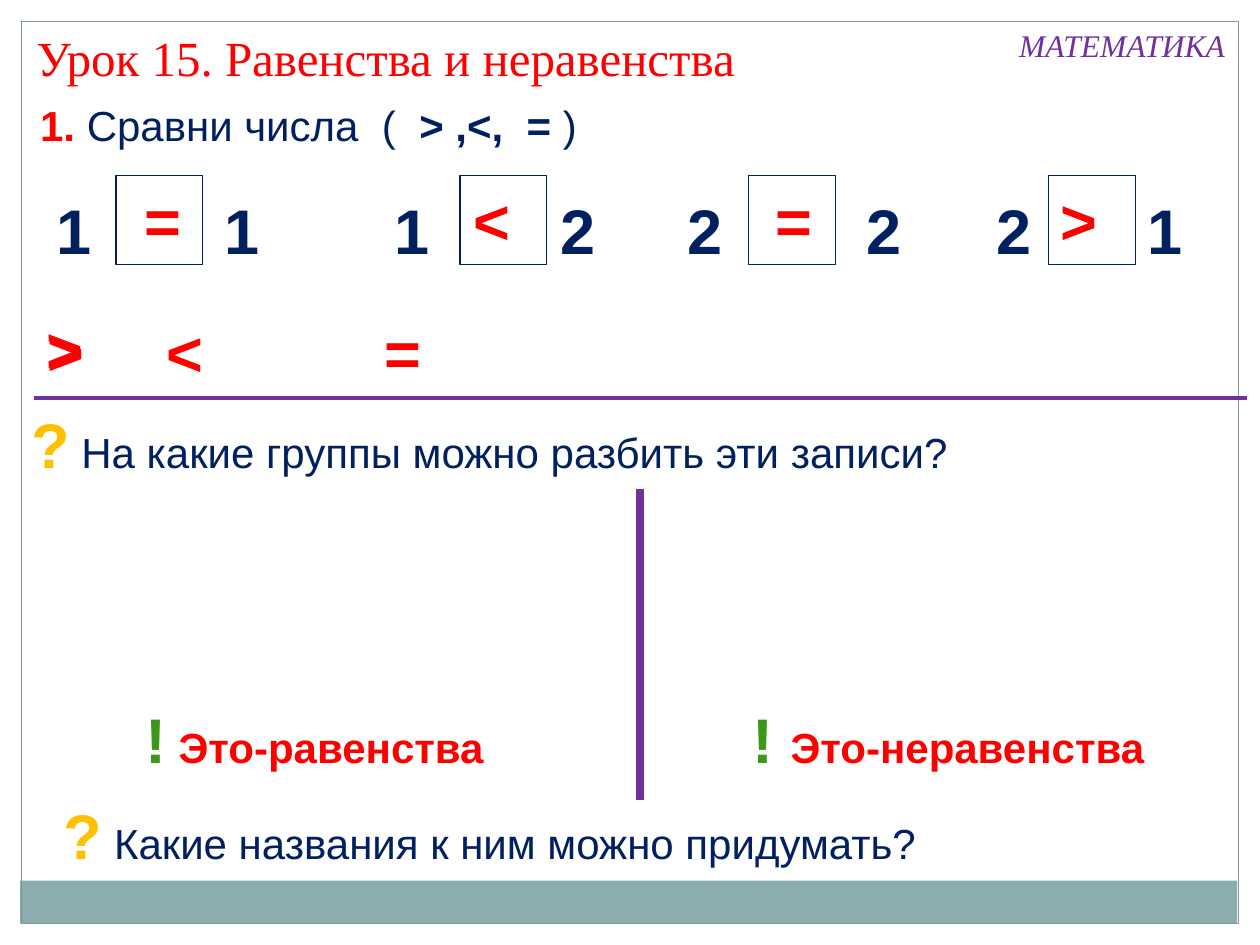
from lxml import etree
from pptx import Presentation
from pptx import util as u
from pptx.dml.color import RGBColor
from pptx.enum import shapes, text
from pptx.oxml.ns import qn

RED, NAVY, PURPLE, AMBER, GREEN = "FF0000", "002060", "7030A0", "FFC000", "3D9719"


def paint(color_format, color):
    color_format.rgb = RGBColor.from_string(color)


def add_text(parent, place, spans, wrap=True):
    """Add a one-paragraph box; each span is (words, size, color, extra format)."""
    box = parent.add_textbox(*map(u.Inches, place))
    frame = box.text_frame
    frame.word_wrap = wrap
    frame.auto_size = text.MSO_AUTO_SIZE.SHAPE_TO_FIT_TEXT
    para = frame.paragraphs[0]
    for words, size, color, extra in spans:
        span = para.add_run()
        span.text = words
        formats = {"name": "Arial", "size": u.Pt(size), "bold": False} | extra
        for key, value in formats.items():
            setattr(span.font, key, value)
        paint(span.font.color, color)


BOLD = {"bold": True}
SERIF = {"name": "Times New Roman"}

deck = Presentation()
deck.slide_width, deck.slide_height = u.Inches(10), u.Inches(7.5)
page = deck.slides.add_slide(deck.slide_layouts[6])

# Page frame: white margins, bottom band, outline
frame_parts = [
    ((0, 0, 10, 0.17), "FFFFFF", None),
    ((9.83, 0, 0.17, 7.5), "FFFFFF", None),
    ((0, 0, 0.17, 7.5), "FFFFFF", None),
    ((0.16, 6.99, 9.66, 0.34), "8CADAE", None),
    ((0.17, 0.17, 9.66, 7.16), None, "7C999A"),
]
for place, fill, line in frame_parts:
    part = page.shapes.add_shape(shapes.MSO_SHAPE.RECTANGLE, *map(u.Inches, place))
    part.shadow.inherit = False
    if fill:
        part.fill.solid()
        paint(part.fill.fore_color, fill)
        part.line.fill.background()
    else:
        part.fill.background()
        paint(part.line.color, line)
        part.line.width = u.Pt(0.75)

# Headings and task
add_text(page.shapes, (0.19, 0.17, 7.8, 0.57),
         [("Урок 15. Равенства и неравенства", 28, RED, SERIF)])
add_text(page.shapes, (7.99, 0.16, 1.85, 0.4),
         [("МАТЕМАТИКА", 18, PURPLE, SERIF | {"italic": True})], wrap=False)
add_text(page.shapes, (0.22, 0.74, 5.1, 0.5), [
    ("1. ", 24, RED, BOLD),
    ("Сравни числа  (  ", 24, NAVY, {}),
    ("> ,<,  = ", 24, NAVY, BOLD),
    (")", 24, NAVY, {}),
])

# Comparisons: left number, its x, square x, sign, sign x, right number, its x
comparisons = [
    ("1", 0.35, 0.92, " =", 0.91, "1", 1.68),
    ("1", 3.03, 3.65, "<", 3.66, "2", 4.35),
    ("2", 5.36, 5.94, " =", 5.92, "2", 6.78),
    ("2", 7.81, 8.32, ">", 8.32, "1", 9.01),
]
for left, left_x, square_x, sign, sign_x, right, right_x in comparisons:
    group = page.shapes.add_group_shape().shapes
    for number, x in ((left, left_x), (right, right_x)):
        add_text(group, (x, 1.47, 0.48, 0.71), [(number, 36, NAVY, BOLD)], wrap=False)
    square = group.add_shape(shapes.MSO_SHAPE.RECTANGLE,
                             *map(u.Inches, (square_x, 1.39, 0.69, 0.71)))
    square.shadow.inherit = False
    square.fill.background()
    paint(square.line.color, NAVY)
    square.line.width = u.Pt(0.75)
    add_text(group, (sign_x, 1.39, 0.69, 0.71), [(sign, 36, RED, BOLD)])

# Signs to choose from
for sign, x, y in ((">", 0.28, 2.43), (">", 0.27, 2.41), ("<", 1.22, 2.44), ("=", 2.95, 2.44)):
    add_text(page.shapes, (x, y, 0.69, 0.71), [(sign, 36, RED, BOLD)])

# Dividers
for ends, width in (((0.27, 3.16, 9.9, 3.16), 2.25), ((5.08, 3.88, 5.08, 6.35), 4.5)):
    divider = page.shapes.add_connector(shapes.MSO_CONNECTOR.STRAIGHT, *map(u.Inches, ends))
    paint(divider.line.color, PURPLE)
    divider.line.width = u.Pt(width)
    etree.SubElement(divider._element.spPr, qn("a:effectLst"))

# Questions and answers: large mark followed by a phrase
remarks = [
    ((0.15, 3.17, 8.94, 0.71), "?", AMBER, " На какие группы можно разбить эти записи?", NAVY, {}),
    ((0.41, 6.27, 9.04, 0.71), "?", AMBER, " Какие названия к ним можно придумать?", NAVY, {}),
    ((1.06, 5.51, 3.04, 0.71), "!", GREEN, " Это-равенства", RED, BOLD),
    ((5.87, 5.51, 3.81, 0.71), "! ", GREEN, "Это-неравенства", RED, BOLD),
]
for place, mark, mark_color, phrase, color, weight in remarks:
    add_text(page.shapes, place, [(mark, 36, mark_color, BOLD), (phrase, 24, color, weight)])

deck.save("out.pptx")
